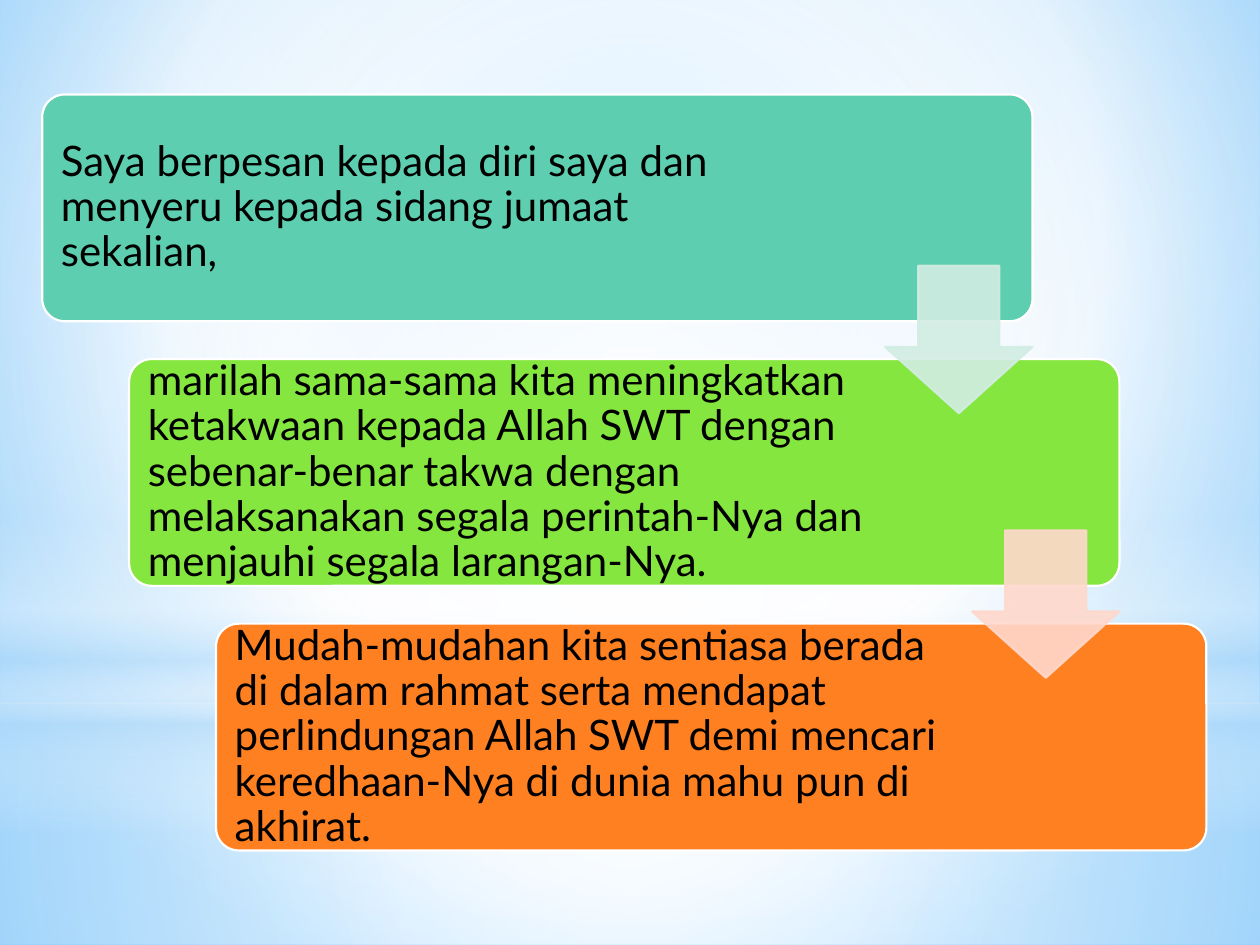
from typing import NamedTuple

from lxml.etree import SubElement
from pptx import Presentation
from pptx.dml.color import RGBColor
from pptx.enum.shapes import MSO_SHAPE as Shape
from pptx.enum.text import MSO_ANCHOR as Anchor
from pptx.oxml.ns import qn
from pptx.util import Inches, Pt

CENTRE = (50, 50, 50, 50)


class Stop(NamedTuple):
    position: int
    color: str
    opacity: int = 100


class Glow(NamedTuple):
    kind: Shape
    box: tuple[float, float, float, float]
    stops: list[Stop]
    focus: tuple[int, ...] | None = CENTRE  # None gives a vertical gradient


class Step(NamedTuple):
    text: str
    color: str
    arrow_color: str | None = None


SKY = [Stop(0, "9ED5FF"), Stop(60, "FFFFFF"), Stop(100, "5BB9FF")]
GLOWS = [
    Glow(Shape.RECTANGLE, (0, 5.58, 10, 1.92),
         [Stop(0, "FFFFFF", 91), Stop(37, "FFFFFF", 76), Stop(100, "B4DCFA", 79)]),
    Glow(Shape.RECTANGLE, (0, 0, 10, 5.58),
         [Stop(0, "FFFFFF", 89), Stop(48, "FFFFFF", 62), Stop(100, "B4DCFA", 79)]),
    Glow(Shape.RECTANGLE, (0, 4.12, 10, 2.5),
         [Stop(0, "FFFFFF", 0), Stop(29, "FFFFFF", 30), Stop(45, "B4DCFA", 40),
          Stop(55, "FFFFFF", 26), Stop(65, "B4DCFA", 60), Stop(100, "FFFFFF", 0)],
         focus=None),
    Glow(Shape.OVAL, (0, 1.75, 10, 5.58),
         [Stop(0, "FFFFFF"), Stop(56, "FFFFFF", 0)]),
]

STEPS = [
    Step("Saya berpesan kepada diri saya dan menyeru kepada sidang jumaat sekalian,",
         "5DCEAF", "D2EDE3"),
    Step("marilah sama-sama kita meningkatkan ketakwaan kepada Allah SWT dengan "
         "sebenar-benar takwa dengan melaksanakan segala perintah-Nya dan menjauhi "
         "segala larangan-Nya.", "86E640", "FFD8CC"),
    Step("Mudah-mudahan kita sentiasa berada di dalam rahmat serta mendapat "
         "perlindungan Allah SWT demi mencari keredhaan-Nya di dunia mahu pun di "
         "akhirat.", "FF8021"),
]

# Staircase geometry, in inches
LEFT, TOP = 0.335, 0.75
STEP_X, STEP_Y = 0.69, 2.1
CARD_WIDTH, CARD_HEIGHT = 7.86, 1.8
ARROW_SIZE, ARROW_DROP = 1.17, 1.36
TEXT_WIDTH, TEXT_MARGIN = 5.9, 0.05


def rgb(color: str) -> RGBColor:
    return RGBColor.from_string(color)


def set_opacity(color_element, percent: int) -> None:
    SubElement(color_element, qn("a:alpha"), val=str(percent * 1000))


def set_gradient(properties, stops: list[Stop], focus) -> None:
    """Turn the solid fill of a properties element into a gradient."""
    solid = properties.find(qn("a:solidFill"))
    gradient = solid.makeelement(qn("a:gradFill"), {"rotWithShape": "1"})
    properties.replace(solid, gradient)
    stop_list = SubElement(gradient, qn("a:gsLst"))
    for stop in stops:
        entry = SubElement(stop_list, qn("a:gs"), pos=str(stop.position * 1000))
        color = SubElement(entry, qn("a:srgbClr"), val=stop.color)
        if stop.opacity < 100:
            set_opacity(color, stop.opacity)
    if focus is None:
        SubElement(gradient, qn("a:lin"), ang=str(90 * 60000), scaled="0")
    else:
        circle = SubElement(gradient, qn("a:path"), {"path": "circle"})
        sides = {side: str(value * 1000) for side, value in zip("ltrb", focus)}
        SubElement(circle, qn("a:fillToRect"), sides)


def add_filled(slide, kind: Shape, box, color: str, line: str | None = None):
    shape = slide.shapes.add_shape(kind, *map(Inches, box))
    shape.shadow.inherit = False
    shape.fill.solid()
    shape.fill.fore_color.rgb = rgb(color)
    if line:
        shape.line.color.rgb = rgb(line)
        shape.line.width = Pt(1.25)
    else:
        shape.line.fill.background()
    return shape


def add_glow(slide, glow: Glow) -> None:
    shape = add_filled(slide, glow.kind, glow.box, "FFFFFF")
    set_gradient(shape.element.spPr, glow.stops, glow.focus)


def add_card(slide, step: Step, left: float, top: float) -> None:
    card = add_filled(slide, Shape.ROUNDED_RECTANGLE,
                      (left, top, CARD_WIDTH, CARD_HEIGHT), step.color, "FFFFFF")
    card.adjustments[0] = 0.1

    box = (left + TEXT_MARGIN, top + TEXT_MARGIN,
           TEXT_WIDTH, CARD_HEIGHT - 2 * TEXT_MARGIN)
    frame = slide.shapes.add_textbox(*map(Inches, box)).text_frame
    frame.word_wrap = True
    frame.vertical_anchor = Anchor.MIDDLE
    frame.margin_left = frame.margin_right = Inches(0.1)
    frame.margin_top = frame.margin_bottom = Inches(0.1)
    message = frame.paragraphs[0]
    message.text = step.text
    message.line_spacing = 0.9
    message.font.name = "Lato"
    message.font.size = Pt(24)
    message.font.color.rgb = rgb("000000")


def add_arrow(slide, color: str, right: float, top: float) -> None:
    arrow = add_filled(slide, Shape.DOWN_ARROW,
                       (right - ARROW_SIZE, top, ARROW_SIZE, ARROW_SIZE), color, color)
    arrow.adjustments[0] = 0.55
    arrow.adjustments[1] = 0.45
    for color_element in arrow.element.spPr.iter(qn("a:srgbClr")):
        set_opacity(color_element, 90)


def main() -> None:
    deck = Presentation()
    deck.slide_width, deck.slide_height = Inches(10), Inches(7.5)
    slide = deck.slides.add_slide(deck.slide_layouts[6])

    # Sky background with layered glows
    slide.background.fill.solid()
    slide.background.fill.fore_color.rgb = rgb("FFFFFF")
    set_gradient(slide.element.find(".//" + qn("p:bgPr")), SKY, (20, 10, 20, 60))
    for glow in GLOWS:
        add_glow(slide, glow)

    # Staircase of cards, then the arrows on top
    corners = [(LEFT + i * STEP_X, TOP + i * STEP_Y) for i in range(len(STEPS))]
    for step, (left, top) in zip(STEPS, corners):
        add_card(slide, step, left, top)
    for step, (left, top) in zip(STEPS, corners):
        if step.arrow_color:
            add_arrow(slide, step.arrow_color, left + CARD_WIDTH, top + ARROW_DROP)

    deck.save("out.pptx")


if __name__ == "__main__":
    main()
